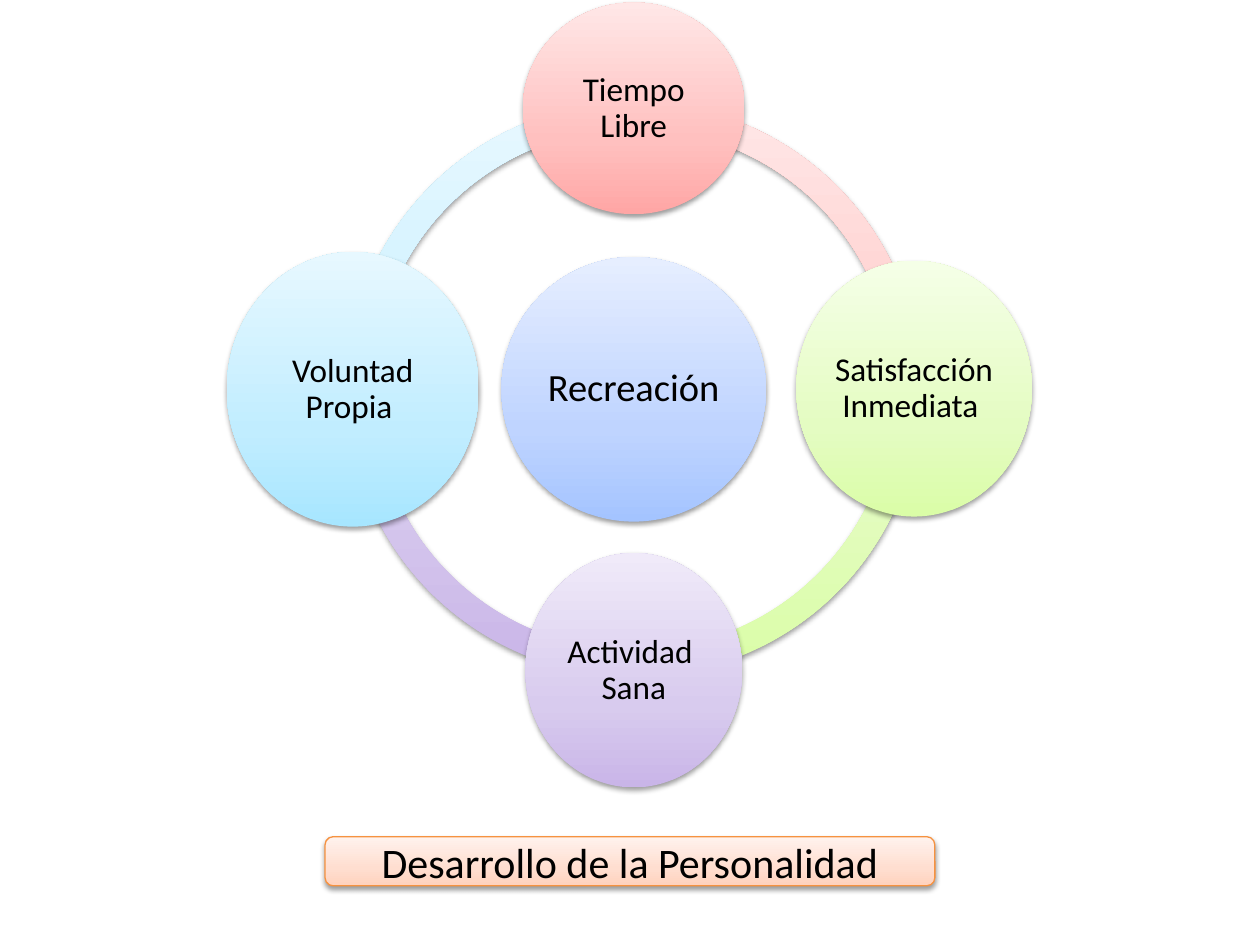
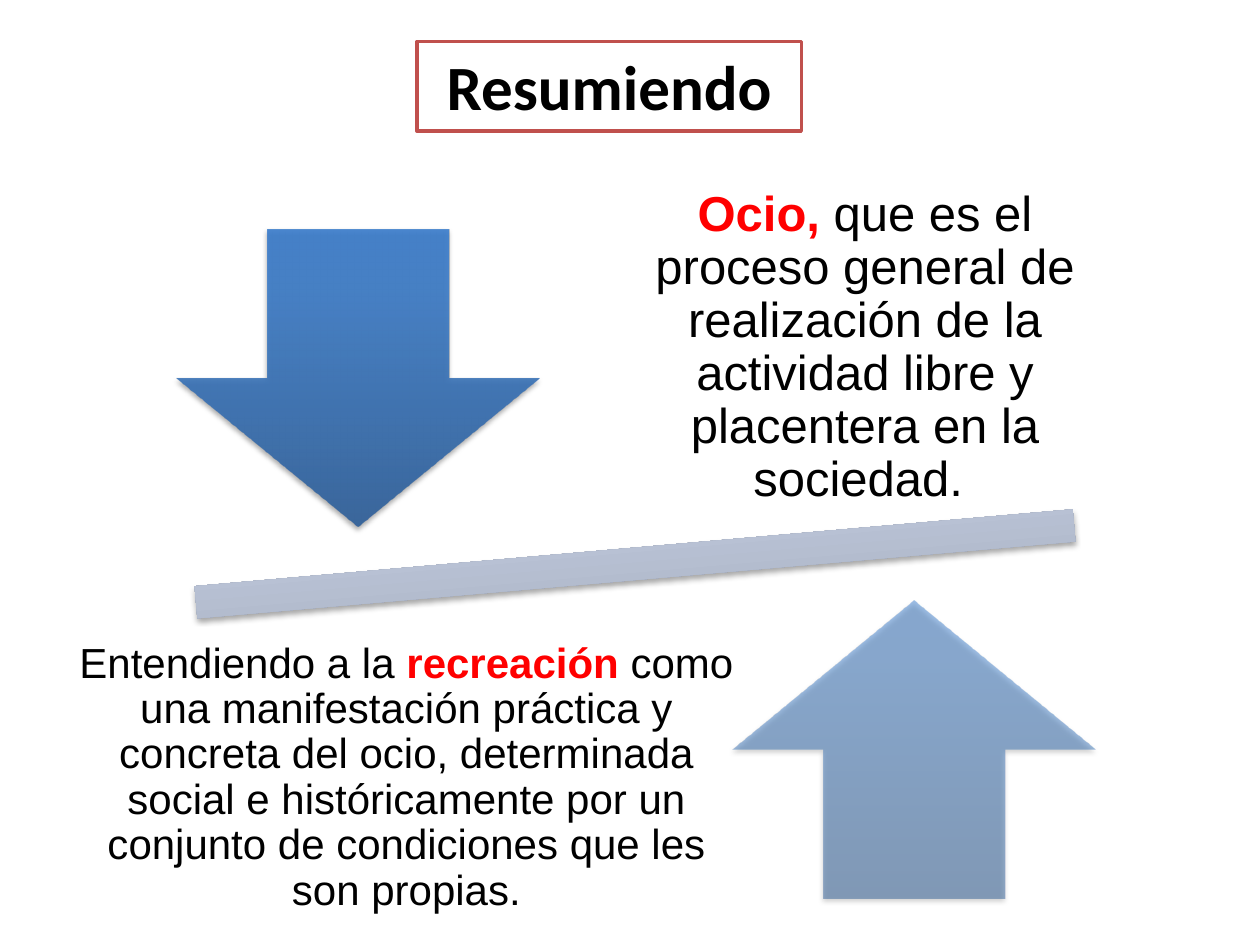
from lxml.etree import SubElement
from pptx import Presentation
from pptx.dml.color import RGBColor
from pptx.enum.shapes import MSO_SHAPE
from pptx.enum.text import MSO_ANCHOR, MSO_AUTO_SIZE, PP_ALIGN
from pptx.oxml.ns import qn
from pptx.util import Inches, Pt

BLACK = RGBColor(0x00, 0x00, 0x00)
WHITE = RGBColor(0xFF, 0xFF, 0xFF)
RED = RGBColor(0xFF, 0x00, 0x00)
BRICK = RGBColor(0xC0, 0x50, 0x4D)
ORANGE = RGBColor(0xF6, 0x92, 0x40)


def ramp(middle, *colors, alpha=100):
    """Return gradient stops from bottom to top as (percent, colour, opacity)."""
    return [(place, RGBColor.from_string(color), alpha)
            for place, color in zip((0, middle, 100), colors)]


SKY = ramp(35, "A7E6FF", "C1EDFF", "E7F8FF")
VIOLET = ramp(35, "C9B5E8", "D8CBEE", "F0EAF9")
LIME = ramp(35, "DAFDA7", "E4FCC2", "F5FFE7")
ROSE = ramp(35, "FFA6A5", "FFC0BF", "FFE7E7")
BLUE = ramp(35, "A4C4FF", "BFD4FF", "E6EEFF")
PEACH = ramp(35, "FFD2BD", "FFDED0", "FFF2ED")
STEEL = ramp(80, "99A0AF", "C6D0E4", "C7D1E5")
ARROW_COLORS = ("2F5F99", "3D7CC7", "3A7CCB")
DEEP_BLUE = ramp(80, *ARROW_COLORS, alpha=90)
PALE_BLUE = ramp(80, *ARROW_COLORS, alpha=50)


def write_text(shape, text, *, size, font="Calibri", bold=False, spacing=None,
               inset=None, anchor=MSO_ANCHOR.MIDDLE, highlight=None):
    """Write one centred paragraph, with the highlighted words in bold red."""
    frame = shape.text_frame
    frame.word_wrap = True
    frame.vertical_anchor = anchor
    if inset is not None:
        frame.margin_left = frame.margin_right = Inches(inset)
        frame.margin_top = frame.margin_bottom = Inches(inset)
    paragraph = frame.paragraphs[0]
    paragraph.alignment = PP_ALIGN.CENTER
    paragraph.line_spacing = spacing
    pieces = [text]
    if highlight:
        before, match, after = text.partition(highlight)
        pieces = [piece for piece in (before, match, after) if piece]
    for piece in pieces:
        run = paragraph.add_run()
        run.text = piece
        run.font.size = Pt(size)
        run.font.name = font
        run.font.bold = bold or piece == highlight
        run.font.color.rgb = RED if piece == highlight else BLACK


class Deck:
    """Holds the presentation style and the current slide."""

    def __init__(self):
        self.presentation = Presentation()
        self.presentation.slide_width = Inches(10)
        self.presentation.slide_height = Inches(7.5)
        self.slide = None

    def new_slide(self, shadow_alpha, shadow_distance):
        """Start a blank slide with its own shadow strength."""
        self.slide = self.presentation.slides.add_slide(
            self.presentation.slide_layouts[6])
        self.shadow_alpha = shadow_alpha
        self.shadow_distance = shadow_distance

    def outline(self, shape, color, width):
        """Draw the outline, or remove it when there is no colour."""
        if color is None:
            shape.line.fill.background()
        else:
            shape.line.color.rgb = color
            shape.line.width = Pt(width)

    def soft_shape(self, preset, box, stops, *, adjustments=(), rotation=0,
                   line=None, width=0.75):
        """Add a preset shape with a vertical gradient and a soft shadow."""
        shape = self.slide.shapes.add_shape(preset, *map(Inches, box))
        shape.rotation = rotation
        for index, value in enumerate(adjustments):
            shape.adjustments[index] = value
        self.outline(shape, line, width)
        shape.fill.gradient()
        shape.fill.gradient_angle = 90
        properties = shape._element.spPr
        stop_list = properties.find(qn("a:gradFill")).find(qn("a:gsLst"))
        for stop in list(stop_list):
            stop_list.remove(stop)
        for place, color, alpha in stops:
            stop = SubElement(stop_list, qn("a:gs"), pos=str(place * 1000))
            self.color(stop, color, alpha)
        shape.shadow.inherit = False
        shadow = SubElement(
            properties.find(qn("a:effectLst")), qn("a:outerShdw"),
            blurRad=str(Pt(3.1)), dist=str(Pt(self.shadow_distance)),
            dir="5400000", rotWithShape="0")
        self.color(shadow, BLACK, self.shadow_alpha)
        return shape

    def color(self, parent, color, alpha):
        """Add a colour with its opacity in percent."""
        node = SubElement(parent, qn("a:srgbClr"), val=str(color))
        if alpha < 100:
            SubElement(node, qn("a:alpha"), val=str(alpha * 1000))

    def circle(self, box, stops, label, size=19):
        """Add a labelled circle."""
        circle = self.soft_shape(MSO_SHAPE.OVAL, box, stops)
        write_text(circle, label, size=size, spacing=0.9, inset=0.03)

    def text(self, box, text, **style):
        """Add a text box."""
        write_text(self.slide.shapes.add_textbox(*map(Inches, box)), text, **style)

    def title(self, box, text):
        """Add a framed title."""
        title = self.slide.shapes.add_shape(MSO_SHAPE.RECTANGLE, *map(Inches, box))
        title.shadow.inherit = False
        title.fill.solid()
        title.fill.fore_color.rgb = WHITE
        self.outline(title, BRICK, 2)
        write_text(title, text, size=36, bold=True, anchor=MSO_ANCHOR.TOP)
        title.text_frame.auto_size = MSO_AUTO_SIZE.SHAPE_TO_FIT_TEXT


def build_recreation(deck):
    """Build the ring of conditions around recreation."""
    deck.new_slide(shadow_alpha=38, shadow_distance=1.6)
    for start, end, stops in ((108, 162, SKY), (54, 108, VIOLET),
                              (0, 54, LIME), (162, 0, ROSE)):
        deck.soft_shape(MSO_SHAPE.BLOCK_ARC, (2.75, 0.81, 4.56, 4.56), stops,
                        adjustments=(start, end, 0.046))
    deck.circle((3.98, 2.04, 2.1, 2.1), BLUE, "Recreación ", size=22)
    deck.circle((4.15, 0.02, 1.76, 1.68), ROSE, "Tiempo Libre")
    deck.circle((6.32, 2.07, 1.87, 2.03), LIME, "Satisfacción Inmediata ")
    deck.circle((4.17, 4.39, 1.72, 1.86), VIOLET, "Actividad  Sana")
    deck.circle((1.8, 2, 2, 2.18), SKY, "Voluntad Propia ")
    outcome = deck.soft_shape(MSO_SHAPE.FLOWCHART_ALTERNATE_PROCESS,
                              (2.58, 6.64, 4.84, 0.39), PEACH, line=ORANGE)
    write_text(outcome, "Desarrollo de la Personalidad", size=24)


def build_summary(deck):
    """Build the balance between leisure and recreation."""
    deck.new_slide(shadow_alpha=35, shadow_distance=1.8)
    deck.soft_shape(MSO_SHAPE.MATH_MINUS, (0.28, 3.93, 9.52, 1.09), STEEL,
                    rotation=355)
    deck.soft_shape(MSO_SHAPE.DOWN_ARROW, (1.4, 1.82, 2.88, 2.36), DEEP_BLUE)
    deck.text((4.75, 1.53, 4.23, 2.47),
              "Ocio, que es el proceso general de realización de la actividad "
              "libre y placentera en la sociedad. ",
              size=28, font="Arial", spacing=0.9, inset=0.22, highlight="Ocio,")
    deck.soft_shape(MSO_SHAPE.UP_ARROW, (5.81, 4.77, 2.88, 2.36), PALE_BLUE)
    deck.text((0.42, 4.94, 5.61, 2.47),
              "Entendiendo a la recreación como una manifestación práctica y "
              "concreta del ocio, determinada social e históricamente por un "
              "conjunto de condiciones que les son propias.",
              size=24, font="Arial", spacing=0.9, inset=0.19,
              highlight="recreación")
    deck.title((3.31, 0.33, 3.05, 0.71), "Resumiendo")


def main():
    """Build and save both slides."""
    deck = Deck()
    build_recreation(deck)
    build_summary(deck)
    deck.presentation.save("out.pptx")


if __name__ == "__main__":
    main()
